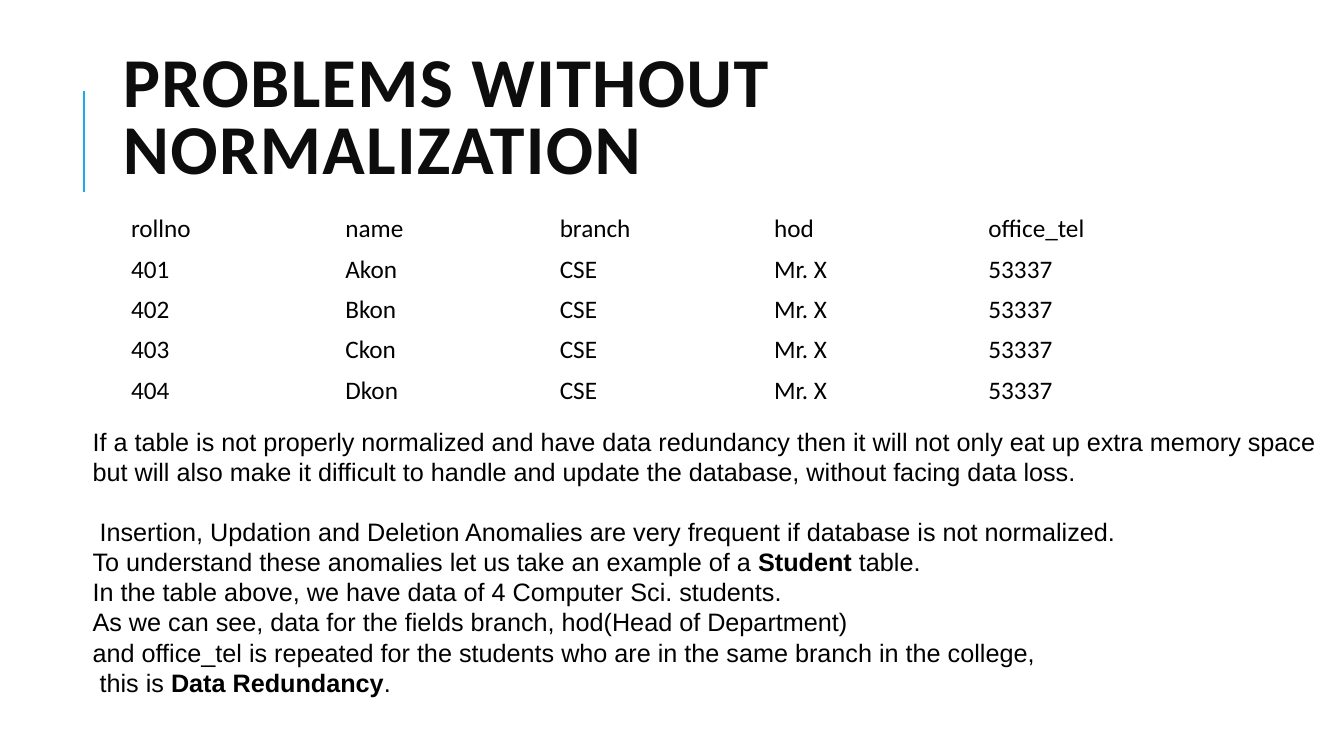
"""Build the slide on problems that arise without normalization."""
import pptx
import pptx.util
import pptx.dml.color
import pptx.enum.shapes
import pptx.enum.text
import pptx.oxml.ns
from lxml import etree

HEADING = "PROBLEMS WITHOUT NORMALIZATION"
FIELDS = ("rollno", "name", "branch", "hod", "office_tel")
STUDENTS = (("401", "Akon"), ("402", "Bkon"), ("403", "Ckon"), ("404", "Dkon"))
SHARED = ("CSE", "Mr. X", "53337")
RECORDS = [FIELDS] + [student + SHARED for student in STUDENTS]
REDUNDANCY = (
    ("If a table is not properly normalized and have data redundancy then it will not only eat up extra memory space",),
    ("but will also make it difficult to handle and update the database, without facing data loss.",),
)
ANOMALIES = (
    (" Insertion, Updation and Deletion Anomalies are very frequent if database is not normalized.",),
    ("To understand these anomalies let us take an example of a ", "Student", " table."),
    ("In the table above, we have data of 4 Computer Sci. students.",),
    ("As we can see, data for the fields branch, hod(Head of Department)",),
    ("and office_tel is repeated for the students who are in the same branch in the college,",),
    (" this is ", "Data Redundancy", "."),
)
KEY_TERMS = {"Student", "Data Redundancy"}

WIDTH, HEIGHT = 13.33, 7.5
HEADING_AREA = (1.12, 0.64, 10.63, 1.11)
RECORDS_AREA = (1.2, 2.07, 10.63, 0.4 * len(RECORDS))
EXPLANATION_AREA = (0.82, 4.16, 12.52, 2.83)
ACCENT_X, ACCENT_TOP, ACCENT_BOTTOM = WIDTH / 16, 0.9, 1.9
BLACK, NEAR_BLACK, ACCENT_BLUE = "000000", "0D0D0D", "1CADE4"
BODY_SIZE = 18
LINE_HEIGHT = 1.15


def color(value):
    return pptx.dml.color.RGBColor.from_string(value)


def inches(*lengths):
    return [pptx.util.Inches(length) for length in lengths]


def add_run(paragraph, words, font, size, shade=BLACK, bold=False):
    run = paragraph.add_run()
    run.text = words
    run.font.name = font
    run.font.size = pptx.util.Pt(size)
    run.font.bold = bold
    run.font.color.rgb = color(shade)
    return run


def add_text_frame(slide, area):
    frame = slide.shapes.add_textbox(*inches(*area)).text_frame
    frame.word_wrap = True
    frame.vertical_anchor = pptx.enum.text.MSO_ANCHOR.MIDDLE
    return frame


def add_accent(slide):
    accent = slide.shapes.add_connector(
        pptx.enum.shapes.MSO_CONNECTOR.STRAIGHT,
        *inches(ACCENT_X, ACCENT_BOTTOM, ACCENT_X, ACCENT_TOP))
    accent.line.color.rgb = color(ACCENT_BLUE)
    accent.line.width = pptx.util.Pt(1.5)
    etree.SubElement(accent._element.spPr, pptx.oxml.ns.qn("a:effectLst"))


def add_heading(slide):
    paragraph = add_text_frame(slide, HEADING_AREA).paragraphs[0]
    paragraph.line_spacing = 0.8
    heading = add_run(paragraph, HEADING, "Calibri", 50, NEAR_BLACK, True)
    heading.font._element.set("spc", "100")


def add_records(slide):
    records = slide.shapes.add_table(
        len(RECORDS), len(FIELDS), *inches(*RECORDS_AREA)).table
    records.first_row = records.horz_banding = False
    for row, record in enumerate(RECORDS):
        for column, value in enumerate(record):
            cell = records.cell(row, column)
            cell.fill.background()
            cell.vertical_anchor = pptx.enum.text.MSO_ANCHOR.MIDDLE
            add_run(cell.text_frame.paragraphs[0], value, "Calibri", BODY_SIZE)


def add_explanation(slide):
    frame = add_text_frame(slide, EXPLANATION_AREA)
    for index, sentence in enumerate(REDUNDANCY + ANOMALIES):
        paragraph = frame.add_paragraph() if index else frame.paragraphs[0]
        if index == len(REDUNDANCY):
            paragraph.space_before = pptx.util.Pt(BODY_SIZE * LINE_HEIGHT)
        for words in sentence:
            add_run(paragraph, words, "Arial", BODY_SIZE, bold=words in KEY_TERMS)


def main():
    deck = pptx.Presentation()
    deck.slide_width, deck.slide_height = inches(WIDTH, HEIGHT)
    slide = deck.slides.add_slide(deck.slide_layouts[6])
    add_accent(slide)
    add_heading(slide)
    add_records(slide)
    add_explanation(slide)
    deck.save("out.pptx")


if __name__ == "__main__":
    main()
